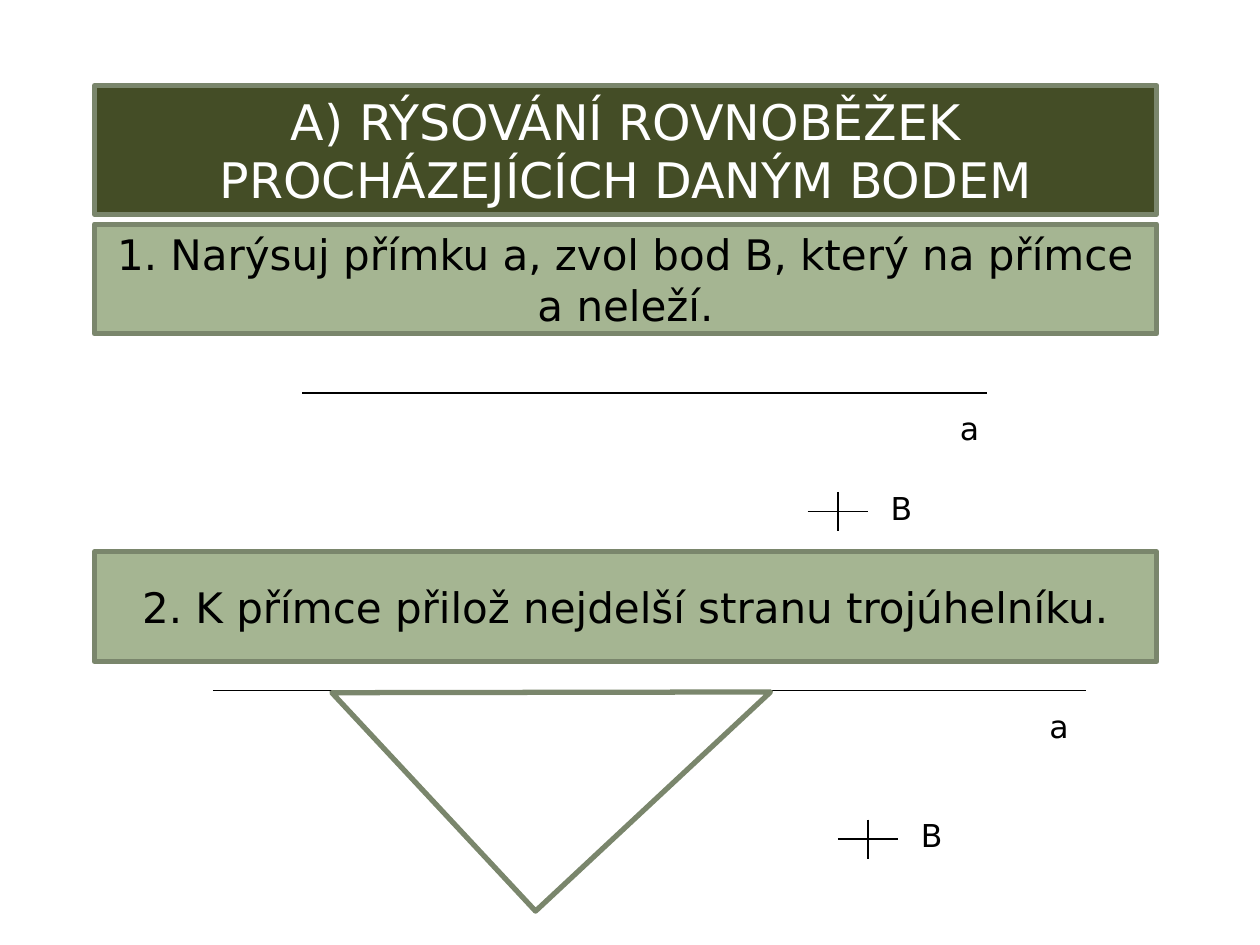
from lxml import etree
from pptx import Presentation
from pptx.dml.color import RGBColor
from pptx.enum.shapes import MSO_CONNECTOR, MSO_SHAPE
from pptx.enum.text import MSO_ANCHOR, MSO_AUTO_SIZE, PP_ALIGN
from pptx.oxml.ns import qn
from pptx.util import Inches, Pt

FONT = "DejaVu Sans"
BLACK, WHITE = "000000", "FFFFFF"
DARK_GREEN, LIGHT_GREEN, BORDER = "444D26", "A5B592", "7A866C"
MARGIN, BAND_WIDTH = 0.75, 8.43


def color(value):
    return RGBColor.from_string(value)


def set_values(target, values):
    for name, value in values.items():
        setattr(target, name, value)


def set_line(shape, value, width):
    shape.line.color.rgb = color(value)
    shape.line.width = Pt(width)


def write(shape, text, size, value, alignment, frame_format):
    frame = shape.text_frame
    frame.text = text
    set_values(frame, {"word_wrap": True, **frame_format})
    paragraph = frame.paragraphs[0]
    paragraph.alignment = alignment
    set_values(paragraph.font, {"name": FONT, "size": Pt(size)})
    paragraph.font.color.rgb = color(value)


def format_band(shape, text, size, fill, text_color):
    shape.fill.solid()
    shape.fill.fore_color.rgb = color(fill)
    set_line(shape, BORDER, 3)
    write(shape, text, size, text_color, PP_ALIGN.CENTER,
          {"vertical_anchor": MSO_ANCHOR.MIDDLE, "auto_size": MSO_AUTO_SIZE.NONE})


def add_title(slide, left, top, width, height, text):
    title = slide.shapes.title
    set_values(title, {"left": Inches(left), "top": Inches(top),
                       "width": Inches(width), "height": Inches(height)})
    format_band(title, text, 28, DARK_GREEN, WHITE)


def add_instruction(slide, left, top, width, height, text):
    band = slide.shapes.add_shape(MSO_SHAPE.RECTANGLE, Inches(left), Inches(top),
                                  Inches(width), Inches(height))
    band.shadow.inherit = False
    format_band(band, text, 24, LIGHT_GREEN, BLACK)


def add_line(slide, x1, y1, x2, y2):
    line = slide.shapes.add_connector(MSO_CONNECTOR.STRAIGHT, Inches(x1), Inches(y1),
                                      Inches(x2), Inches(y2))
    set_line(line, BLACK, 1)
    etree.SubElement(line._element.spPr, qn("a:effectLst"))


def add_label(slide, left, top, width, text):
    label = slide.shapes.add_textbox(Inches(left), Inches(top), Inches(width), Inches(0.4))
    write(label, text, 18, BLACK, PP_ALIGN.LEFT,
          {"auto_size": MSO_AUTO_SIZE.SHAPE_TO_FIT_TEXT})


def add_straight_line(slide, left, top, width, label_inset, label_width):
    """Line a, with its name below the right end."""
    right = left + width
    add_line(slide, left, top, right, top)
    add_label(slide, right - label_inset, top + 0.08, label_width, "a")


def add_point(slide, x, y):
    """Point B as a cross, with its name on the right."""
    half_width, half_height = 0.24, 0.155
    add_line(slide, x, y - half_height, x, y + half_height)
    add_line(slide, x - half_width, y, x + half_width, y)
    add_label(slide, x + 0.32, y - 0.23, 0.47, "B")


def add_set_square(slide, left, top, width, height):
    triangle = slide.shapes.add_shape(MSO_SHAPE.RIGHT_TRIANGLE, Inches(left), Inches(top),
                                      Inches(width), Inches(height))
    triangle.shadow.inherit = False
    triangle.rotation = 317
    triangle.fill.background()
    set_line(triangle, BORDER, 3)


def main():
    presentation = Presentation()
    set_values(presentation, {"slide_width": Inches(10), "slide_height": Inches(7.5)})
    slide = presentation.slides.add_slide(presentation.slide_layouts[5])

    add_title(slide, MARGIN, 0.68, BAND_WIDTH, 1.02,
              "A) RÝSOVÁNÍ ROVNOBĚŽEK PROCHÁZEJÍCÍCH DANÝM BODEM")

    # Step 1: line and point
    add_instruction(slide, MARGIN, 1.78, BAND_WIDTH, 0.87,
                    "1. Narýsuj přímku a, zvol bod B, který na přímce a neleží.")
    add_straight_line(slide, 2.4, 3.12, 5.43, 0.31, 0.87)
    add_point(slide, 6.65, 4.06)

    # Step 2: set square against the line
    add_instruction(slide, MARGIN, 4.38, BAND_WIDTH, 0.87,
                    "2. K přímce přilož nejdelší stranu trojúhelníku.")
    add_straight_line(slide, 1.69, 5.48, 6.93, 0.39, 0.63)
    add_set_square(slide, 3.1, 4.31, 2.55, 2.37)
    add_point(slide, 6.89, 6.66)

    presentation.save("out.pptx")


if __name__ == "__main__":
    main()
